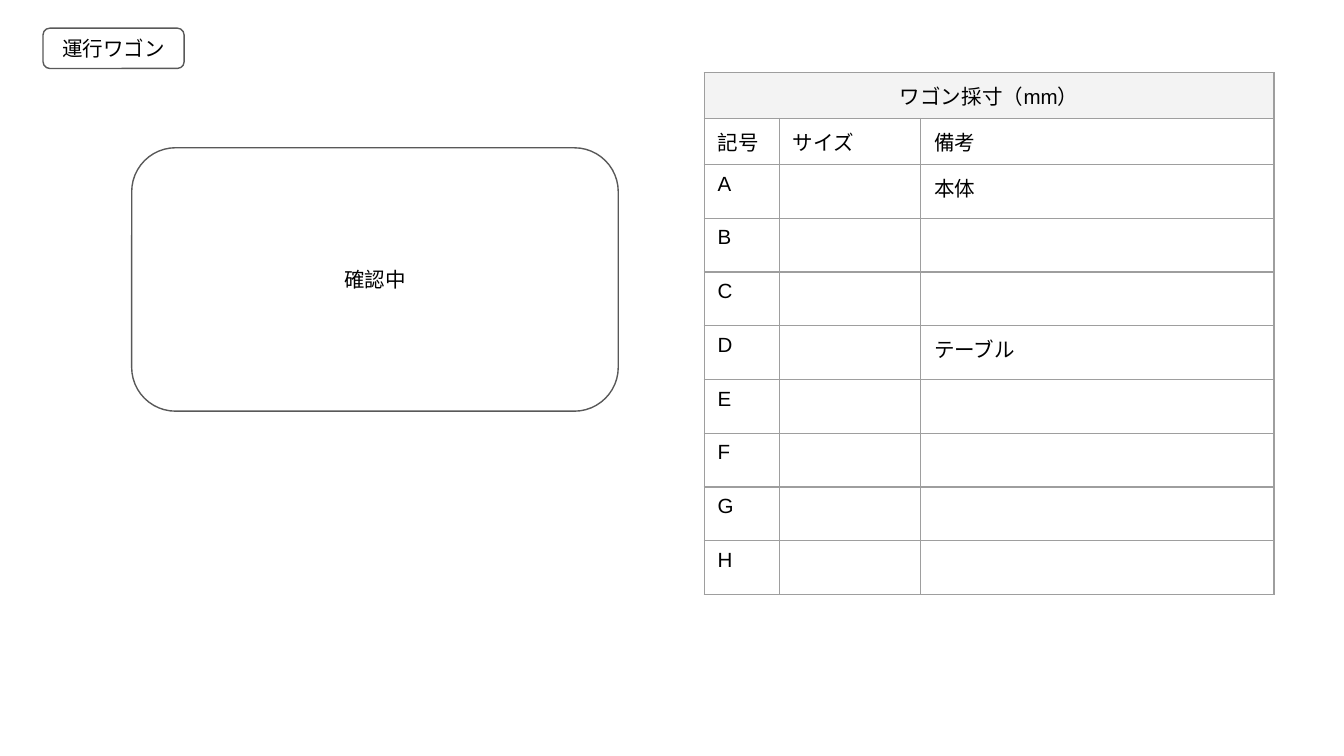
from lxml import etree
from pptx import Presentation
from pptx.dml.color import RGBColor
from pptx.enum import shapes, text
from pptx.oxml.ns import qn
from pptx.util import Inches, Pt

SLIDE_WIDTH = 10
SLIDE_HEIGHT = SLIDE_WIDTH * 9 / 16
LABELS = [
    ("運行ワゴン", (0.32, 0.21, 1.05, 0.3)),
    ("確認中", (0.98, 1.1, 3.62, 1.96)),
]
TITLE = "ワゴン採寸（mm）"
HEADINGS = ("記号", "サイズ", "備考")
NOTES = {"A": "本体", "D": "テーブル"}
ROWS = [(TITLE, "", ""), HEADINGS] + [(c, "", NOTES.get(c, "")) for c in "ABCDEFGH"]
COL_WIDTHS = (0.56, 1.05, 2.63)
HEAD_HEIGHT, ROW_HEIGHT = 0.34, 0.4
TABLE_LEFT, TABLE_TOP = 5.24, 0.54
FONT = {"name": "Arial", "size": Pt(11)}
CELL_MARGINS = {"margin_left": 0.1, "margin_right": 0.1,
                "margin_top": 0.06, "margin_bottom": 0.06}


def rgb(value):
    return RGBColor.from_string(value)


def paint(fill, color):
    fill.solid()
    fill.fore_color.rgb = rgb(color)


def write(tf, words, align):
    p = tf.paragraphs[0]
    p.alignment = align
    r = p.add_run()
    r.text = words
    for key, value in FONT.items():
        setattr(r.font, key, value)
    r.font.color.rgb = rgb("000000")


def add_label(slide, words, box):
    sp = slide.shapes.add_shape(shapes.MSO_SHAPE.ROUNDED_RECTANGLE, *map(Inches, box))
    sp.shadow.inherit = False
    paint(sp.fill, "FFFFFF")
    paint(sp.line.fill, "595959")
    sp.line.width = Pt(0.75)
    tf = sp.text_frame
    tf.word_wrap = True
    tf.vertical_anchor = text.MSO_ANCHOR.MIDDLE
    for side in ("left", "right", "top", "bottom"):
        setattr(tf, f"margin_{side}", Inches(0.1))
    write(tf, words, text.PP_ALIGN.CENTER)


def add_borders(cell, color, width):
    """Borders must come before the fill in the cell properties."""
    tc_pr = cell._tc.get_or_add_tcPr()
    for i, side in enumerate(("lnL", "lnR", "lnT", "lnB")):
        ln = etree.Element(qn(f"a:{side}"), w=str(Pt(width)))
        solid = etree.SubElement(ln, qn("a:solidFill"))
        etree.SubElement(solid, qn("a:srgbClr"), val=color)
        tc_pr.insert(i, ln)


def shrink_empty(cell):
    """Keep the default 18 pt of an empty cell from stretching its row."""
    p = cell.text_frame.paragraphs[0]._p
    etree.SubElement(p, qn("a:endParaRPr"), sz="1100")


def add_size_table(slide):
    heights = [HEAD_HEIGHT] * 2 + [ROW_HEIGHT] * (len(ROWS) - 2)
    box = (TABLE_LEFT, TABLE_TOP, sum(COL_WIDTHS), sum(heights))
    table = slide.shapes.add_table(len(ROWS), len(COL_WIDTHS), *map(Inches, box)).table
    table.first_row = table.horz_banding = False
    for col, width in zip(table.columns, COL_WIDTHS):
        col.width = Inches(width)
    for i, (row, height, words) in enumerate(zip(table.rows, heights, ROWS)):
        row.height = Inches(height)
        align = text.PP_ALIGN.LEFT if i else text.PP_ALIGN.CENTER
        for cell, word in zip(row.cells, words):
            for key, value in CELL_MARGINS.items():
                setattr(cell, key, Inches(value))
            paint(cell.fill, "FFFFFF" if i else "F3F3F3")
            add_borders(cell, "9E9E9E", 0.75)
            if word:
                write(cell.text_frame, word, align)
            else:
                shrink_empty(cell)
    table.cell(0, 0).merge(table.cell(0, len(COL_WIDTHS) - 1))


def main():
    prs = Presentation()
    prs.slide_width, prs.slide_height = Inches(SLIDE_WIDTH), Inches(SLIDE_HEIGHT)
    slide = prs.slides.add_slide(prs.slide_layouts[6])
    add_size_table(slide)
    for words, box in LABELS:
        add_label(slide, words, box)
    prs.save("out.pptx")


if __name__ == "__main__":
    main()
